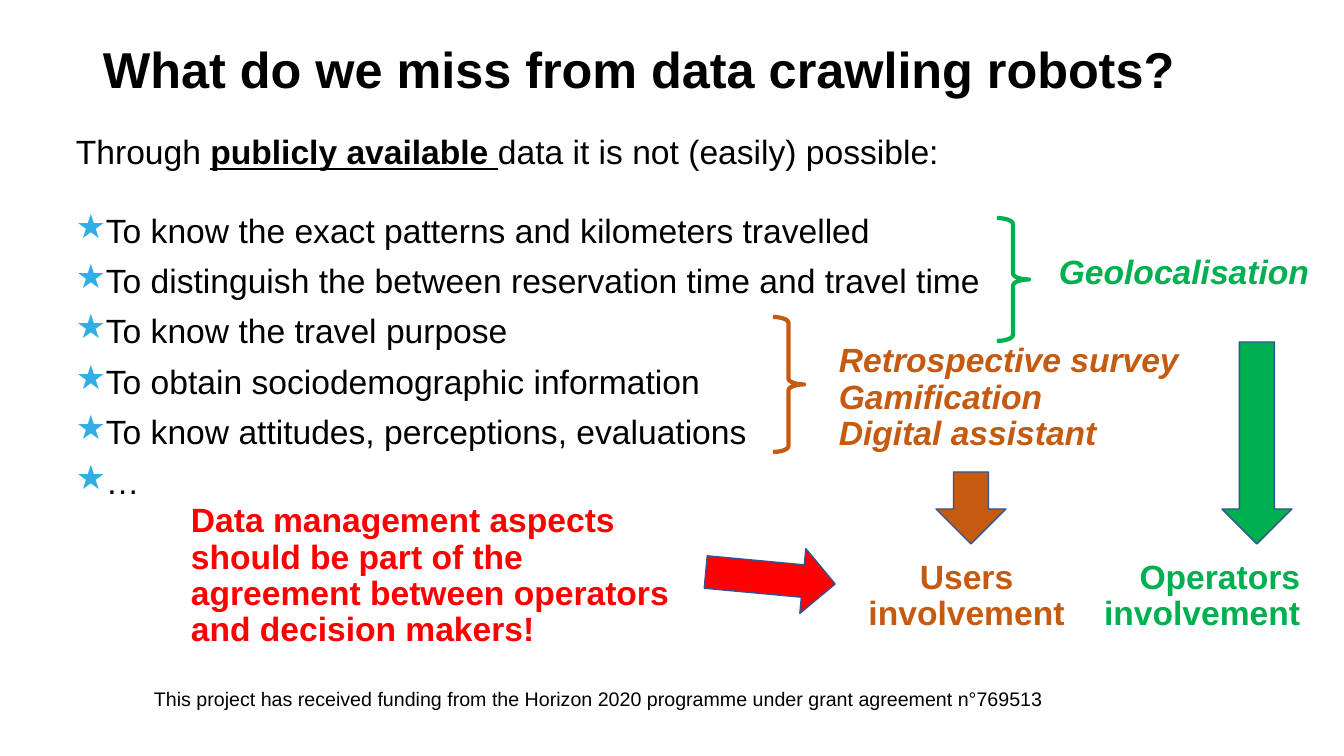
from lxml import etree
from pptx import Presentation
from pptx import util as u
from pptx.dml.color import RGBColor
from pptx.enum import shapes, text
from pptx.oxml.ns import qn

BLACK = RGBColor(0x00, 0x00, 0x00)
RED = RGBColor(0xFF, 0x00, 0x00)
GREEN = RGBColor(0x00, 0xB0, 0x50)
ORANGE = RGBColor(0xC5, 0x5A, 0x11)
OUTLINE = RGBColor(0x32, 0x54, 0x91)
STAR = RGBColor(0x30, 0xAE, 0xE5)

FONT = "Arial"
PX = 914400 / 100.8
LEFT, CENTER, RIGHT = text.PP_ALIGN.LEFT, text.PP_ALIGN.CENTER, text.PP_ALIGN.RIGHT
ARROW, BRACE = shapes.MSO_SHAPE.DOWN_ARROW, shapes.MSO_SHAPE.RIGHT_BRACE

INTRO = [("Through ", False), ("publicly available ", True),
         ("data it is not (easily) possible:", False)]
GAPS = [
    "To know the exact patterns and kilometers travelled",
    "To distinguish the between reservation time and travel time",
    "To know the travel purpose",
    "To obtain sociodemographic information",
    "To know attitudes, perceptions, evaluations",
    "…",
]
BODY_BOX = (66, 131, 1208, 424)

LABELS = [
    ("What do we miss from data crawling robots?",
     (93, 40, 1159, 91), 36, BLACK, True, False, LEFT, 0.9),
    ("This project has received funding from the Horizon 2020 programme under grant agreement n°769513",
     (144, 682, 1057, 34), 14, BLACK, False, False, LEFT, 1.0),
    ("Retrospective survey\nGamification\nDigital assistant",
     (829, 339, 374, 114), 24, ORANGE, True, True, LEFT, 0.9),
    ("Geolocalisation",
     (1049, 251, 275, 53), 24, GREEN, True, True, LEFT, 0.9),
    ("Operators involvement",
     (1084, 555, 226, 86), 24, GREEN, True, False, RIGHT, 0.9),
    ("Users involvement",
     (846, 555, 241, 86), 24, ORANGE, True, False, CENTER, 0.9),
    ("Data management aspects should be part of the agreement between operators and decision makers!",
     (181, 499, 514, 155), 24, RED, True, False, LEFT, 0.9),
]
BRACES = [((773, 317, 31, 135), ORANGE), ((997, 218, 32, 123), GREEN)]
ARROWS = [
    ((1222, 342, 70, 202), GREEN, 0),
    ((936, 472, 70, 72), ORANGE, 0),
    ((738, 513, 65, 130), RED, 275.3),
]


def emu(box):
    return [u.Emu(round(v * PX)) for v in box]


def add_frame(s, box):
    tf = s.shapes.add_textbox(*emu(box)).text_frame
    tf.word_wrap = True
    return tf


def style(font, size, color, bold=False, italic=False):
    font.name, font.size = FONT, u.Pt(size)
    font.bold, font.italic = bold, italic
    font.color.rgb = color


def add_label(s, words, box, size, color, bold, italic, align, spacing):
    tf = add_frame(s, box)
    tf.text = words
    for p in tf.paragraphs:
        p.alignment, p.line_spacing = align, spacing
        for r in p.runs:
            style(r.font, size, color, bold, italic)


def add_star(p):
    pPr = p._p.get_or_add_pPr()
    indent = u.Inches(0.25)
    pPr.set("marL", str(indent))
    pPr.set("indent", str(-indent))
    clr = etree.SubElement(pPr, qn("a:buClr"))
    etree.SubElement(clr, qn("a:srgbClr"), val=str(STAR))
    etree.SubElement(pPr, qn("a:buChar"), char="★")


def add_body(s):
    tf = add_frame(s, BODY_BOX)
    p = tf.paragraphs[0]
    p.line_spacing = 0.9
    for words, strong in INTRO:
        r = p.add_run()
        r.text = words
        style(r.font, 24, BLACK, strong)
        r.font.underline = strong
    for i, gap in enumerate(GAPS):
        p = tf.add_paragraph()
        p.text = gap
        p.line_spacing = 0.9
        p.space_before = u.Pt(10 if i else 30)
        add_star(p)
        style(p.runs[0].font, 24, BLACK)


def add_outline(s, kind, box, color, width):
    sp = s.shapes.add_shape(kind, *emu(box))
    sp.shadow.inherit = False
    sp.line.color.rgb = color
    sp.line.width = u.Pt(width)
    return sp


def main():
    prs = Presentation()
    prs.slide_width, prs.slide_height = emu((1344, 756))
    s = prs.slides.add_slide(prs.slide_layouts[6])
    add_body(s)
    for label in LABELS:
        add_label(s, *label)
    for box, color in BRACES:
        sp = add_outline(s, BRACE, box, color, 3)
        sp.fill.background()
        sp.adjustments[0] = 0.19
    for box, color, turn in ARROWS:
        sp = add_outline(s, ARROW, box, OUTLINE, 1)
        sp.fill.solid()
        sp.fill.fore_color.rgb = color
        sp.rotation = turn
    prs.save("out.pptx")


if __name__ == "__main__":
    main()
